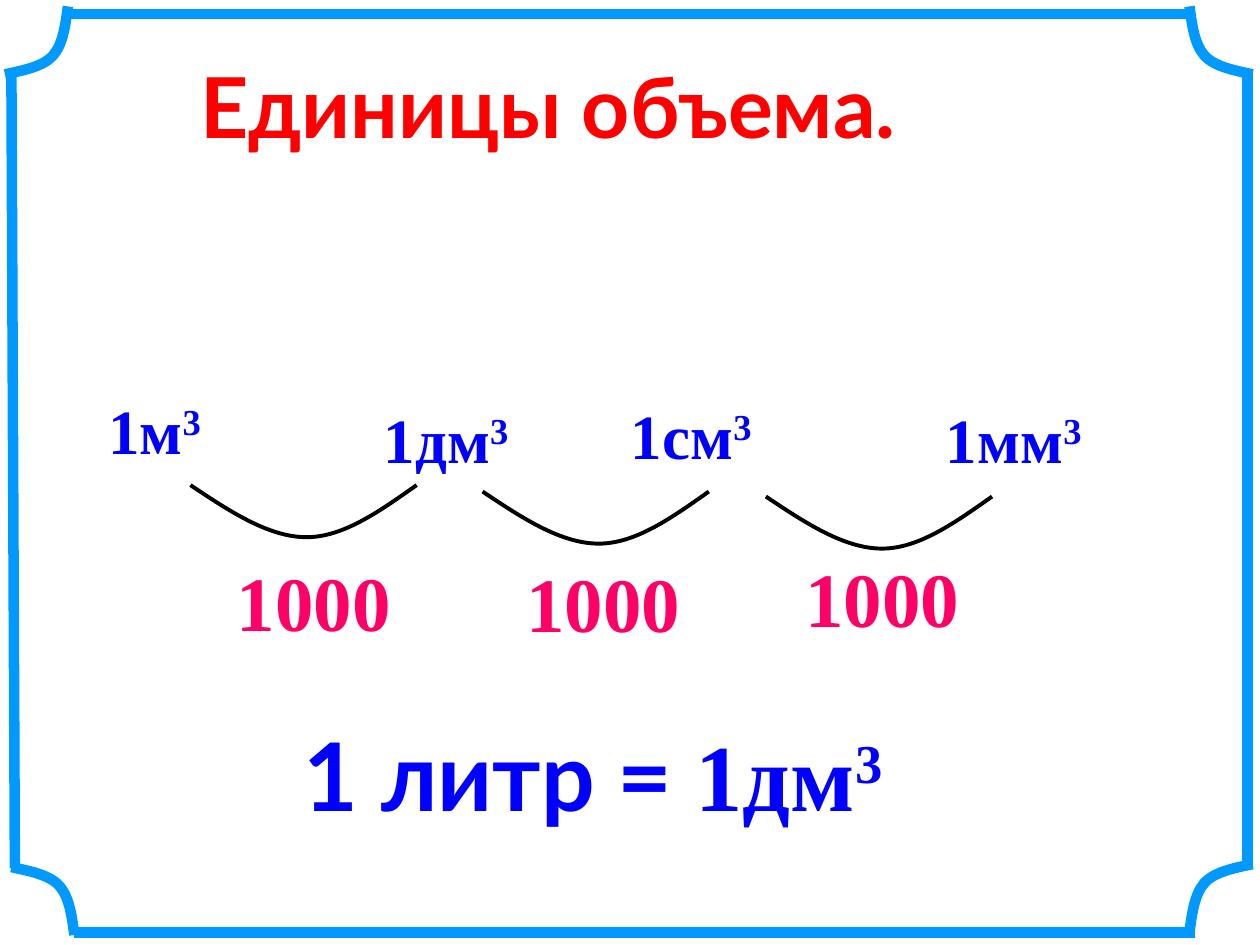
from lxml import etree
from pptx import Presentation
from pptx.dml.color import RGBColor
from pptx.enum.shapes import MSO_CONNECTOR
from pptx.enum.text import MSO_ANCHOR, MSO_AUTO_SIZE, PP_ALIGN
from pptx.oxml.ns import qn
from pptx.util import Cm, Pt

COLORS = {"title": "FF0000", "unit": "0000FF", "factor": "FF0066",
          "arc": "000000", "frame": "0099FF"}
SERIF, SANS = "Times New Roman", "Lato"

presentation = Presentation()
presentation.slide_width, presentation.slide_height = Cm(25.4), Cm(19.05)
slide = presentation.slides.add_slide(presentation.slide_layouts[5])


def write_text(shape, box, runs, size, color, align=PP_ALIGN.LEFT, wrap=False):
    """Place a shape and fill it with (text, font, is_superscript) runs."""
    shape.left, shape.top, shape.width, shape.height = [Cm(v) for v in box]
    frame = shape.text_frame
    frame.word_wrap = wrap
    frame.auto_size = MSO_AUTO_SIZE.NONE
    frame.vertical_anchor = MSO_ANCHOR.TOP
    paragraph = frame.paragraphs[0]
    paragraph.alignment = align
    for text, font, superscript in runs:
        run = paragraph.add_run()
        run.text = text
        run.font.name, run.font.size, run.font.bold = font, Pt(size), True
        run.font.color.rgb = RGBColor.from_string(COLORS[color])
        if superscript:
            run.font._element.set("baseline", "30000")


def draw_curve(points, color, width):
    """Draw an open Bezier curve: a start point, then three points per segment."""
    points = [(Cm(x), Cm(y)) for x, y in points]
    builder = slide.shapes.build_freeform(*points[0], scale=1.0)
    builder.add_line_segments(points[1:], close=False)
    shape = builder.convert_to_shape()
    shape.shadow.inherit = False
    shape.fill.background()
    shape.line.color.rgb = RGBColor.from_string(COLORS[color])
    shape.line.width = Pt(width)
    # Regroup the straight segments into cubic ones
    outline = shape._element.find(".//" + qn("a:path"))
    segments = outline.findall(qn("a:lnTo"))
    for start in range(0, len(segments), 3):
        cubic = etree.SubElement(outline, qn("a:cubicBezTo"))
        for segment in segments[start:start + 3]:
            cubic.append(segment[0])
            outline.remove(segment)


# Title
write_text(slide.shapes.title, (3.78, 0.97, 17.98, 2.31),
           [("Единицы объема.", SANS, False)], 48, "title", wrap=True)

# Units of volume
for unit, left, top, width in [("1м", 1.93, 7.77, 2.51), ("1дм", 7.49, 7.95, 3.33),
                               ("1см", 12.47, 7.87, 3.23), ("1мм", 18.82, 7.95, 3.45)]:
    write_text(slide.shapes.add_textbox(0, 0, 0, 0), (left, top, width, 1.78),
               [(unit, SERIF, False), ("3", SERIF, True)], 36, "unit")

# Arcs between neighbouring units, each with its factor
ARC = [(0, 0), (0.79, 0.53), (1.58, 1.05), (2.34, 1.05),
       (3.08, 1.05), (3.81, 0.53), (4.56, 0)]
for arc_left, arc_top, factor_left, factor_top in [(3.84, 9.78, 4.52, 11.05),
                                                   (9.73, 9.91, 10.36, 11.07),
                                                   (15.44, 10.01, 15.98, 10.97)]:
    draw_curve([(arc_left + x, arc_top + y) for x, y in ARC], "arc", 2.25)
    write_text(slide.shapes.add_textbox(0, 0, 0, 0), (factor_left, factor_top, 3.61, 2.11),
               [("1000", SERIF, False)], 44, "factor")

# Frame edges
for edge in [(1.37, 0.28, 24.03, 0.28), (1.5, 18.8, 24.08, 18.8),
             (25.15, 1.5, 25.15, 17.5), (0.23, 1.5, 0.3, 17.5)]:
    line = slide.shapes.add_connector(MSO_CONNECTOR.STRAIGHT, *[Cm(v) for v in edge])
    line.line.color.rgb = RGBColor.from_string(COLORS["frame"])
    line.line.width = Pt(6)
    etree.SubElement(line._element.spPr, qn("a:effectLst"))

# Frame corners: one curve, mirrored into each corner
CORNER = [(0, 0), (0.36, 0.08), (0.76, 0.15), (0.97, 0.38),
          (1.17, 0.61), (1.22, 0.99), (1.27, 1.37)]
for left, top, x_sign, y_sign in [(0.23, 17.48, 1, 1), (25.25, 17.42, -1, 1),
                                  (25.25, 1.5, -1, -1), (0.1, 1.5, 1, -1)]:
    draw_curve([(left + x_sign * x, top + y_sign * y) for x, y in CORNER], "frame", 6)

# Litre equation
write_text(slide.shapes.add_textbox(0, 0, 0, 0), (5.59, 14.33, 12.73, 4.88),
           [("1 литр = ", SANS, False), ("1дм", SERIF, False), ("3", SERIF, True)],
           54, "unit", align=PP_ALIGN.CENTER)

presentation.save("out.pptx")
